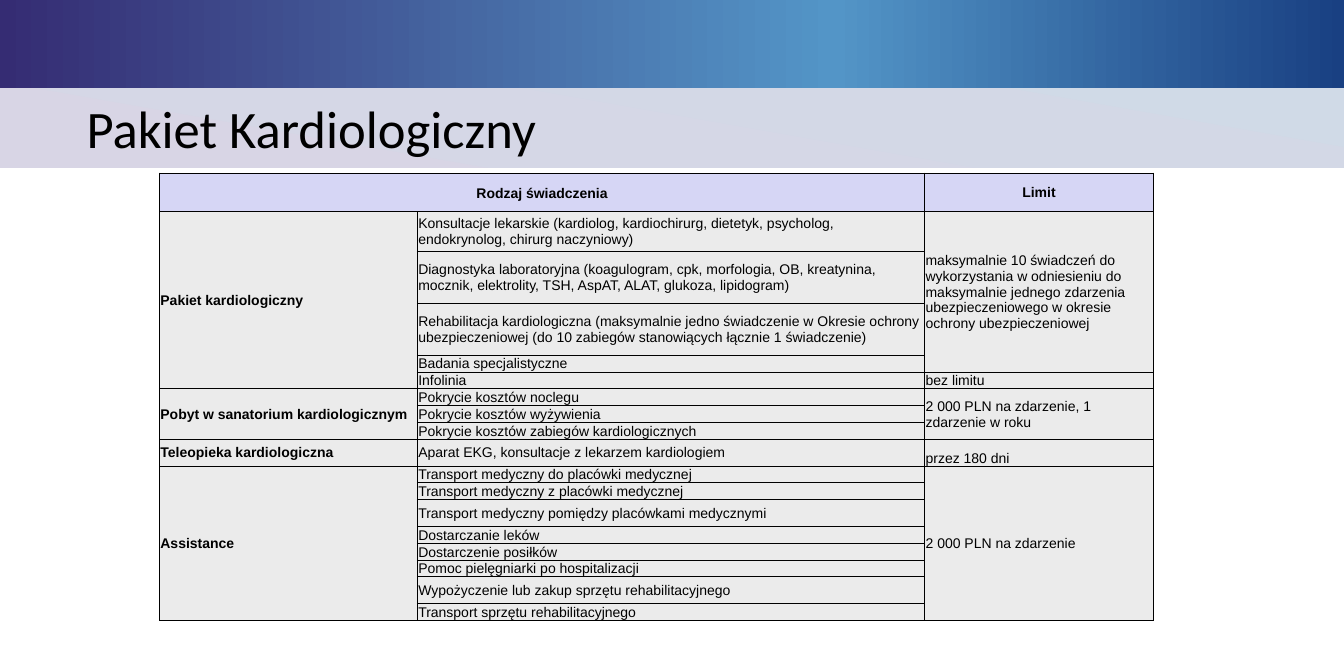
from copy import deepcopy
from dataclasses import dataclass

from lxml import etree
from pptx import Presentation
from pptx.dml.color import RGBColor
from pptx.enum import shapes, text
from pptx.oxml import ns
from pptx.util import Inches, Pt


@dataclass(frozen=True)
class Theme:
    black: str = "000000"
    header: str = "D6D6F5"
    body: str = "EBEBEB"
    top_band: tuple = ((0, "352C73"), (0.62, "5395C7"), (1, "194082"))
    title_band: tuple = ((0, "D0DAE7"), (1, "D8D5E5"))
    title_font: str = "Calibri"
    table_font: str = "Arial"
    title_size: float = 45.1
    table_size: float = 12


THEME = Theme()
MIDDLE, BOTTOM = text.MSO_ANCHOR.MIDDLE, text.MSO_ANCHOR.BOTTOM
COL_WIDTHS = [3.07, 6.04, 2.72]
HEADER_HEIGHT = 0.46

# Each group: name, services with their row heights, limits as (rows covered, text, anchor)
GROUPS = [
    ("Pakiet kardiologiczny", [
        ("Konsultacje lekarskie (kardiolog, kardiochirurg, dietetyk, psycholog, "
         "endokrynolog, chirurg naczyniowy)", 0.47),
        ("Diagnostyka laboratoryjna (koagulogram, cpk, morfologia, OB, kreatynina, "
         "mocznik, elektrolity, TSH, AspAT, ALAT, glukoza, lipidogram)", 0.62),
        ("Rehabilitacja kardiologiczna (maksymalnie jedno świadczenie w Okresie ochrony "
         "ubezpieczeniowej (do 10 zabiegów stanowiących łącznie 1 świadczenie)", 0.62),
        ("Badania specjalistyczne", 0.2),
        ("Infolinia", 0.2),
    ], [
        (4, "maksymalnie 10 świadczeń do wykorzystania w odniesieniu do maksymalnie "
            "jednego zdarzenia ubezpieczeniowego w okresie ochrony ubezpieczeniowej", MIDDLE),
        (1, "bez limitu", BOTTOM),
    ]),
    ("Pobyt w sanatorium kardiologicznym", [
        ("Pokrycie kosztów noclegu", 0.2),
        ("Pokrycie kosztów wyżywienia", 0.2),
        ("Pokrycie kosztów zabiegów kardiologicznych", 0.2),
    ], [(3, "2 000 PLN na zdarzenie, 1 zdarzenie w roku", MIDDLE)]),
    ("Teleopieka kardiologiczna", [
        ("Aparat EKG, konsultacje z lekarzem kardiologiem", 0.32),
    ], [(1, "przez 180 dni", BOTTOM)]),
    ("Assistance", [
        ("Transport medyczny do placówki medycznej", 0.2),
        ("Transport medyczny z placówki medycznej", 0.2),
        ("Transport medyczny pomiędzy placówkami medycznymi", 0.32),
        ("Dostarczanie leków", 0.2),
        ("Dostarczenie posiłków", 0.2),
        ("Pomoc pielęgniarki po hospitalizacji", 0.2),
        ("Wypożyczenie lub zakup sprzętu rehabilitacyjnego", 0.32),
        ("Transport sprzętu rehabilitacyjnego", 0.2),
    ], [(8, "2 000 PLN na zdarzenie", MIDDLE)]),
]


def format_runs(p, font, size, bold=False):
    for r in p.runs:
        r.font.name, r.font.size, r.font.bold = font, Pt(size), bold
        r.font.color.rgb = RGBColor.from_string(THEME.black)


def add_band(s, box, stops, angle):
    """Add a gradient rectangle; angle runs counter-clockwise."""
    sp = s.shapes.add_shape(shapes.MSO_SHAPE.RECTANGLE, *map(Inches, box))
    sp.shadow.inherit = False
    sp.line.fill.background()
    sp.fill.gradient()
    sp.fill.gradient_angle = angle
    gs_list = sp._element.spPr.find(".//" + ns.qn("a:gsLst"))
    for _ in stops[2:]:
        gs_list.append(deepcopy(gs_list[0]))
    for stop, (position, color) in zip(sp.fill.gradient_stops, stops):
        stop.position = position
        stop.color.rgb = RGBColor.from_string(color)


def add_header(s, box):
    left, top, width, _ = box
    add_band(s, (left, top + 0.77, width, 1.27), THEME.title_band, 260)
    add_band(s, (left, top, width, 1.09), THEME.top_band, 0)

    title = s.shapes.title
    s.shapes._spTree.append(title._element)  # bring in front of the bands
    title.left, title.top = Inches(left + 0.93), Inches(top + 0.7)
    title.width, title.height = Inches(11.78), Inches(1.81)
    tf = title.text_frame
    tf.text = "Pakiet Kardiologiczny"
    tf.vertical_anchor = MIDDLE
    p = tf.paragraphs[0]
    p.alignment, p.line_spacing = text.PP_ALIGN.LEFT, 0.9
    format_runs(p, THEME.title_font, THEME.title_size)


def style_cell(cell, fill):
    cell.margin_left = cell.margin_right = cell.margin_top = Inches(0.01)
    cell.margin_bottom = 0
    tcPr = cell._tc.get_or_add_tcPr()
    for side in "LRTB":
        ln = etree.SubElement(tcPr, ns.qn(f"a:ln{side}"), w=str(Pt(1)))
        solid = etree.SubElement(ln, ns.qn("a:solidFill"))
        etree.SubElement(solid, ns.qn("a:srgbClr"), val=THEME.black)
    cell.fill.solid()
    cell.fill.fore_color.rgb = RGBColor.from_string(fill)


def write_cell(table, row, col, words, rows=1, cols=1, bold=False, anchor=MIDDLE,
               align=text.PP_ALIGN.LEFT):
    """Write a cell, merged over the given number of rows and columns."""
    cell = table.cell(row, col)
    if rows * cols > 1:
        cell.merge(table.cell(row + rows - 1, col + cols - 1))
    cell.text_frame.text = words
    cell.vertical_anchor = anchor
    p = cell.text_frame.paragraphs[0]
    p.alignment = align
    format_runs(p, THEME.table_font, THEME.table_size, bold)
    return p


def add_benefits_table(s, left, top):
    heights = [HEADER_HEIGHT] + [h for _, services, _ in GROUPS for _, h in services]
    table = s.shapes.add_table(len(heights), len(COL_WIDTHS), Inches(left), Inches(top),
                               Inches(sum(COL_WIDTHS)), Inches(sum(heights))).table
    table.first_row = table.horz_banding = False
    for column, width in zip(table.columns, COL_WIDTHS):
        column.width = Inches(width)
    for i, (row, height) in enumerate(zip(table.rows, heights)):
        row.height = Inches(height)
        for cell in row.cells:
            style_cell(cell, THEME.body if i else THEME.header)

    center = text.PP_ALIGN.CENTER
    p = write_cell(table, 0, 0, "Rodzaj świadczenia", cols=2, bold=True, align=center)
    p.line_spacing = 1.15
    write_cell(table, 0, 2, "Limit", bold=True, align=center)

    first = 1
    for name, services, limits in GROUPS:
        write_cell(table, first, 0, name, rows=len(services), bold=True)
        for i, (service, _) in enumerate(services):
            write_cell(table, first + i, 1, service)
        limit_row = first
        for rows, limit, anchor in limits:
            write_cell(table, limit_row, 2, limit, rows=rows, anchor=anchor)
            limit_row += rows
        first += len(services)


def main():
    prs = Presentation()
    prs.slide_width, prs.slide_height = Inches(16), Inches(7.69)
    s = prs.slides.add_slide(prs.slide_layouts[5])
    add_header(s, (0, -0.04, 16, 2.04))
    add_benefits_table(s, 1.9, 2.06)
    prs.save("out.pptx")


if __name__ == "__main__":
    main()
